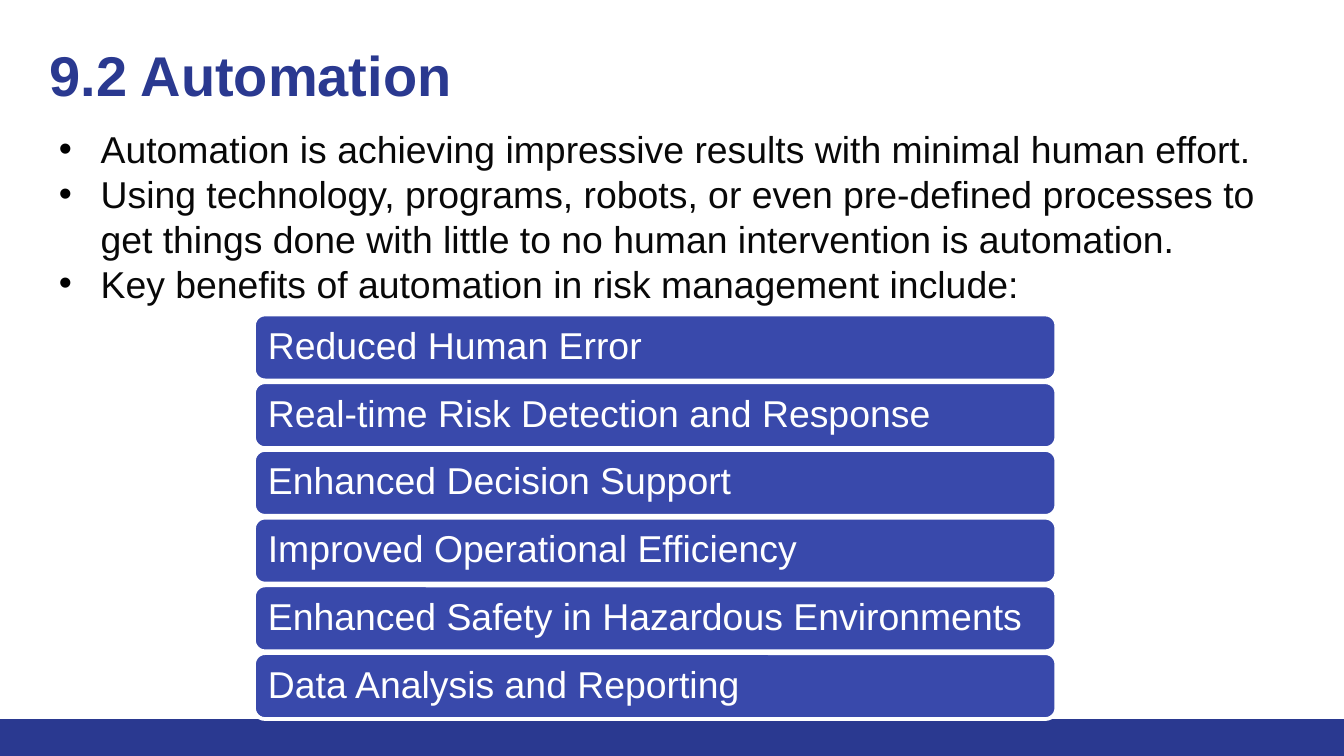
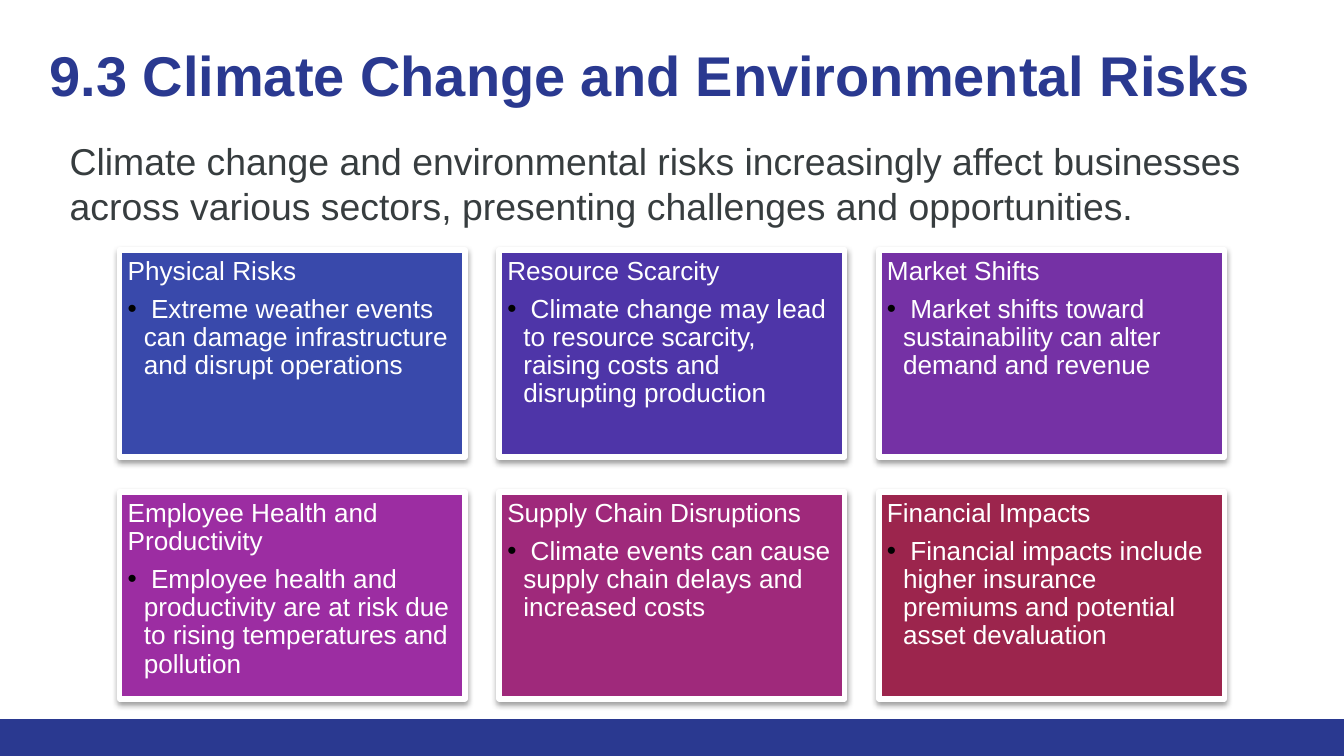
from lxml.etree import SubElement
from pptx import Presentation
from pptx.dml.color import RGBColor
from pptx.enum.shapes import MSO_SHAPE as Shape
from pptx.enum.text import MSO_ANCHOR as Anchor, PP_ALIGN as Align
from pptx.oxml.ns import qn
from pptx.util import Inches, Pt

COLORS = {
    "navy": "2A3990",
    "indigo": "3949AB",
    "violet": "4E35A8",
    "purple": "7531A5",
    "magenta": "9C2DA2",
    "plum": "9F297B",
    "crimson": "9C254D",
    "white": "FFFFFF",
    "black": "000000",
    "ink": "080808",
    "slate": "373D3F",
}
FONT = "Arial"
COLUMNS, ROWS = 100, 56.25

AUTOMATION_POINTS = [
    "Automation is achieving impressive results with minimal human effort.",
    "Using technology, programs, robots, or even pre-defined processes to get things done "
    "with little to no human intervention is automation.",
    "Key benefits of automation in risk management include:",
]
BENEFITS = [
    "Reduced Human Error",
    "Real-time Risk Detection and Response",
    "Enhanced Decision Support",
    "Improved Operational Efficiency",
    "Enhanced Safety in Hazardous Environments",
    "Data Analysis and Reporting",
]
CLIMATE_INTRO = (
    "Climate change and environmental risks increasingly affect businesses across various "
    "sectors, presenting challenges and opportunities."
)
RISKS = [
    ("Physical Risks", "indigo",
     "Extreme weather events can damage infrastructure and disrupt operations"),
    ("Resource Scarcity", "violet",
     "Climate change may lead to resource scarcity, raising costs and disrupting production"),
    ("Market Shifts", "purple",
     "Market shifts toward sustainability can alter demand and revenue"),
    ("Employee Health and Productivity", "magenta",
     "Employee health and productivity are at risk due to rising temperatures and pollution"),
    ("Supply Chain Disruptions", "plum",
     "Climate events can cause supply chain delays and increased costs"),
    ("Financial Impacts", "crimson",
     "Financial impacts include higher insurance premiums and potential asset devaluation"),
]


def color(name):
    return RGBColor.from_string(COLORS[name])


class SlideBuilder:
    def __init__(self):
        self.deck = Presentation()
        self.deck.slide_width = Inches(10)
        self.deck.slide_height = Inches(5.625)
        self.page = None

    def place(self, column, row, width, height):
        across = self.deck.slide_width / COLUMNS
        down = self.deck.slide_height / ROWS
        return [round(size) for size in
                (column * across, row * down, width * across, height * down)]

    def start(self, title):
        self.page = self.deck.slides.add_slide(self.deck.slide_layouts[6])
        self.block(Shape.RECTANGLE, (0, 53.5, COLUMNS, 2.75), "navy")
        frame = self.text_box((2.7, 2, 92, 8.9), inset=0.1)
        self.paragraph(frame, title, 30, "navy", bold=True)

    def frame(self, box, inset=None, anchor=Anchor.TOP):
        frame = box.text_frame
        frame.word_wrap = True
        frame.vertical_anchor = anchor
        if inset is not None:
            frame.margin_left = frame.margin_right = Inches(inset)
            frame.margin_top = frame.margin_bottom = Inches(inset)
        return frame

    def text_box(self, area, inset=None):
        return self.frame(self.page.shapes.add_textbox(*self.place(*area)), inset)

    def block(self, kind, area, fill, border=0):
        shape = self.page.shapes.add_shape(kind, *self.place(*area))
        shape.shadow.inherit = False
        shape.fill.solid()
        shape.fill.fore_color.rgb = color(fill)
        if border:
            shape.line.color.rgb = color("white")
            shape.line.width = Pt(border)
        else:
            shape.line.fill.background()
        return shape

    def paragraph(self, frame, text, size, ink, bold=False, indent=0, spacing=None, after=0):
        para = frame.paragraphs[0] if not frame.text else frame.add_paragraph()
        para.text = text
        para.alignment = Align.LEFT
        para.space_after = Pt(after)
        if spacing:
            para.line_spacing = spacing
        if indent:
            self.bullet(para, indent)
        para.font.name = FONT
        para.font.size = Pt(size)
        para.font.bold = bold
        para.font.color.rgb = color(ink)

    def bullet(self, para, indent):
        properties = para._p.get_or_add_pPr()
        properties.set("marL", str(Inches(indent)))
        properties.set("indent", str(-Inches(indent)))
        tint = SubElement(properties, qn("a:buClr"))
        SubElement(tint, qn("a:srgbClr"), val=COLORS["black"])
        SubElement(properties, qn("a:buFont"), typeface=FONT)
        SubElement(properties, qn("a:buChar"), char="•")

    def soft_shadow(self, shape):
        effects = shape._element.spPr.find(qn("a:effectLst"))
        outer = SubElement(effects, qn("a:outerShdw"), blurRad=str(Pt(3.1)),
                           dist=str(Pt(1.6)), dir="5400000", rotWithShape="0")
        tint = SubElement(outer, qn("a:srgbClr"), val=COLORS["black"])
        SubElement(tint, qn("a:alpha"), val="38000")

    def bar(self, area, text):
        shape = self.block(Shape.ROUNDED_RECTANGLE, area, "indigo", border=2)
        frame = self.frame(shape, 0.08, Anchor.MIDDLE)
        self.paragraph(frame, text, 20, "white", spacing=0.9)

    def card(self, area, heading, fill, detail):
        shape = self.block(Shape.RECTANGLE, area, fill, border=3)
        self.soft_shadow(shape)
        frame = self.frame(shape, 0.06)
        self.paragraph(frame, heading, 14, "white", spacing=0.9, after=5)
        self.paragraph(frame, f" {detail}", 14, "white", indent=0.12, spacing=0.9)


def automation(builder):
    builder.start("9.2 Automation")
    frame = builder.text_box((3.4, 8.9, 93.2, 14.5))
    for point in AUTOMATION_POINTS:
        builder.paragraph(frame, point, 20, "ink", indent=0.31)
    for index, benefit in enumerate(BENEFITS):
        builder.bar((18.9, 23.4 + 5.04 * index, 59.7, 4.9), benefit)


def climate(builder):
    builder.start("9.3 Climate Change and Environmental Risks")
    frame = builder.text_box((4.2, 9.8, 93.1, 7.7))
    builder.paragraph(frame, CLIMATE_INTRO, 20, "slate")
    for index, risk in enumerate(RISKS):
        row, column = divmod(index, 3)
        builder.card((8.9 + 28.25 * column, 18.6 + 18 * row, 25.7, 15.4), *risk)


def main():
    builder = SlideBuilder()
    automation(builder)
    climate(builder)
    builder.deck.save("out.pptx")


if __name__ == "__main__":
    main()
